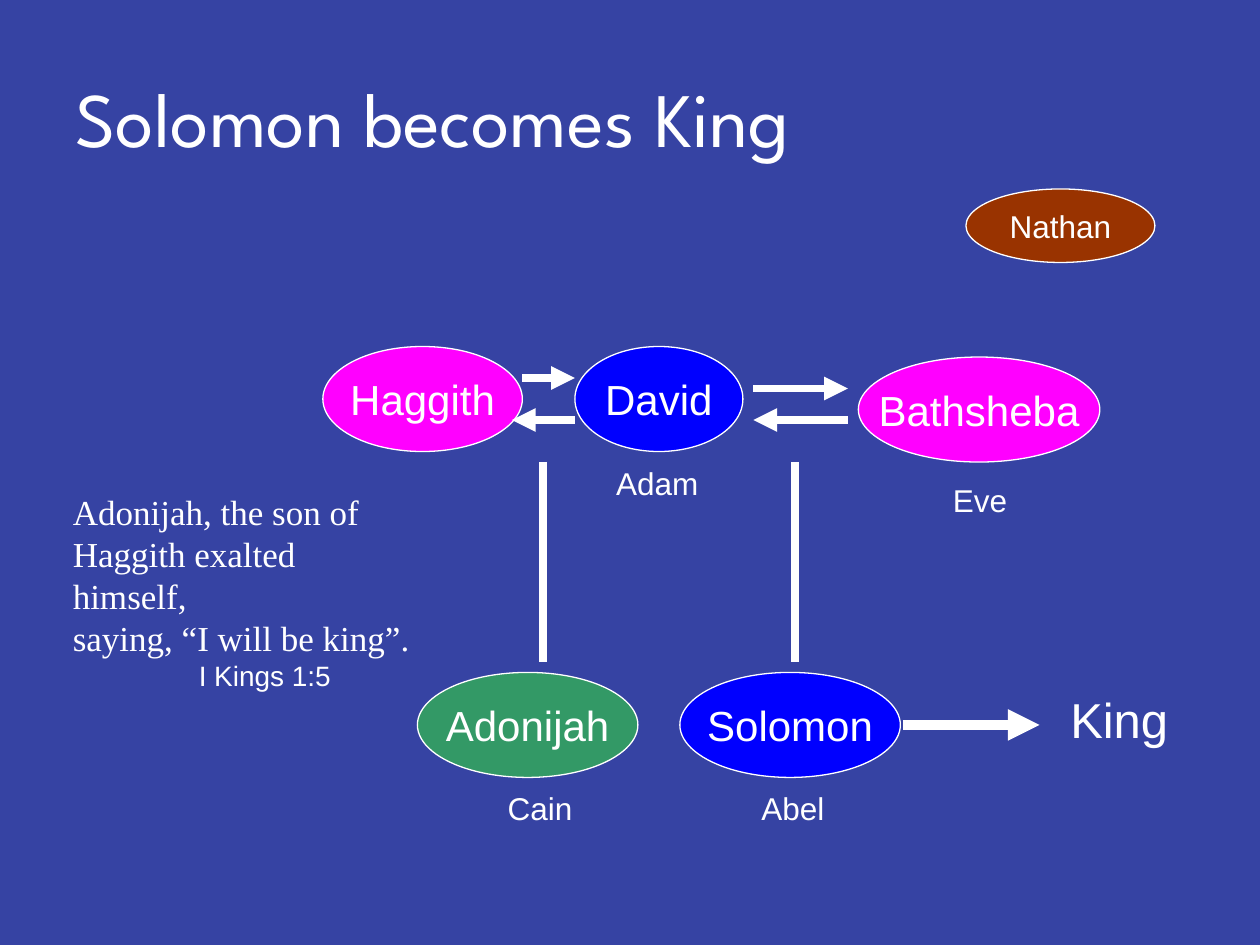
from pptx import Presentation
from pptx.dml.color import RGBColor
from pptx.enum.shapes import MSO_CONNECTOR as CONN, MSO_SHAPE as SHAPE
from pptx.enum.text import MSO_ANCHOR as ANCHOR, MSO_AUTO_SIZE as AUTO, PP_ALIGN as ALIGN
from pptx.oxml.ns import qn
from pptx.util import Pt
from lxml.etree import SubElement

WHITE = RGBColor(0xFF, 0xFF, 0xFF)
NAVY = RGBColor(0x36, 0x43, 0xA3)
BLUE = RGBColor(0x00, 0x00, 0xFF)
PINK = RGBColor(0xFF, 0x00, 0xFF)
GREEN = RGBColor(0x33, 0x99, 0x66)
BROWN = RGBColor(0x99, 0x33, 0x00)


def write(p, text, size=18, font="Arial", align=ALIGN.LEFT):
    p.alignment = align
    r = p.add_run()
    r.text = text
    r.font.size = Pt(size)
    r.font.name = font
    r.font.color.rgb = WHITE


def add_label(s, box, text, size=18):
    tf = s.shapes.add_textbox(*map(Pt, box)).text_frame
    tf.word_wrap = False
    tf.auto_size = AUTO.SHAPE_TO_FIT_TEXT
    write(tf.paragraphs[0], text, size)


def add_person(s, box, name, color, size=24):
    sp = s.shapes.add_shape(SHAPE.OVAL, *map(Pt, box))
    sp.shadow.inherit = False
    sp.fill.solid()
    sp.fill.fore_color.rgb = color
    sp.line.color.rgb = WHITE
    sp.line.width = Pt(0.75)
    tf = sp.text_frame
    tf.word_wrap = False
    tf.vertical_anchor = ANCHOR.MIDDLE
    write(tf.paragraphs[0], name, size, align=ALIGN.CENTER)


def add_line(s, x1, y1, x2, y2, width=4.5, end=None):
    c = s.shapes.add_connector(CONN.STRAIGHT, Pt(x1), Pt(y1), Pt(x2), Pt(y2))
    c.line.color.rgb = WHITE
    c.line.width = Pt(width)
    if end:
        SubElement(c.line._get_or_add_ln(), qn("a:" + end), type="triangle")
    SubElement(c._element.spPr, qn("a:effectLst"))


def add_title(s, box, text):
    sp = s.shapes.title
    sp.left, sp.top, sp.width, sp.height = map(Pt, box)
    sp.text_frame.vertical_anchor = ANCHOR.MIDDLE
    write(sp.text_frame.paragraphs[0], text, 44, "League Spartan")


def add_parents(s, box):
    x, y, w, h = box
    add_person(s, (x, y, 114, 60), "Haggith", PINK)
    add_person(s, (x + 144, y, 96, 60), "David", BLUE)
    add_person(s, (x + w - 138, y + 6, 138, 60), "Bathsheba", PINK)
    add_label(s, (x + 160.5, y + 63.5, 63, 29), "Adam")
    add_label(s, (x + 353, y + 73.5, 47, 29), "Eve")
    for x1, x2, dy, end in ((114, 144, 18, "tailEnd"), (108, 144, 42, "headEnd"),
                            (246, 300, 24, "tailEnd"), (246, 300, 42, "headEnd")):
        add_line(s, x + x1, y + dy, x + x2, y + dy, end=end)
    for dx in (126, 270):
        add_line(s, x + dx, y + 66, x + dx, y + h)


def add_sons(s, box):
    x, y, w, h = box
    for dx, name, color, label_dx, label in ((0, "Adonijah", GREEN, 44.5, "Cain"),
                                             (150, "Solomon", BLUE, 189.5, "Abel")):
        add_person(s, (x + dx, y, 126, 60), name, color)
        add_label(s, (x + label_dx, y + h - 29, 53, 29), label)
    add_line(s, x + 277.5, y + 30, x + 355.5, y + 30, width=6, end="tailEnd")
    add_label(s, (x + w - 71, y + 6, 71, 41), "King", 28)


def add_quote(s, box, lines, source):
    tf = s.shapes.add_textbox(*map(Pt, box)).text_frame
    tf.word_wrap = True
    for i, text in enumerate(lines):
        p = tf.add_paragraph() if i else tf.paragraphs[0]
        write(p, text, 20, "Times New Roman")
    p = tf.add_paragraph()
    tabs = SubElement(p._p.get_or_add_pPr(), qn("a:tabLst"))
    SubElement(tabs, qn("a:tab"), pos=str(Pt(72)), algn="l")
    write(p, "\t" + source, 16)


def main():
    prs = Presentation()
    prs.slide_width, prs.slide_height = Pt(720), Pt(540)
    s = prs.slides.add_slide(prs.slide_layouts[5])
    s.background.fill.solid()
    s.background.fill.fore_color.rgb = NAVY
    add_title(s, (36, 21.6, 648, 90), "Solomon becomes King")
    add_person(s, (552, 108, 108, 42), "Nathan", BROWN, 18)
    add_parents(s, (184.5, 198, 444, 180))
    add_sons(s, (238.5, 384.25, 437, 92))
    add_quote(s, (34.5, 277, 209, 99.5),
              ("Adonijah, the son of", "Haggith exalted himself,", "saying, “I will be king”."),
              "I Kings 1:5")
    prs.save("out.pptx")


if __name__ == "__main__":
    main()
